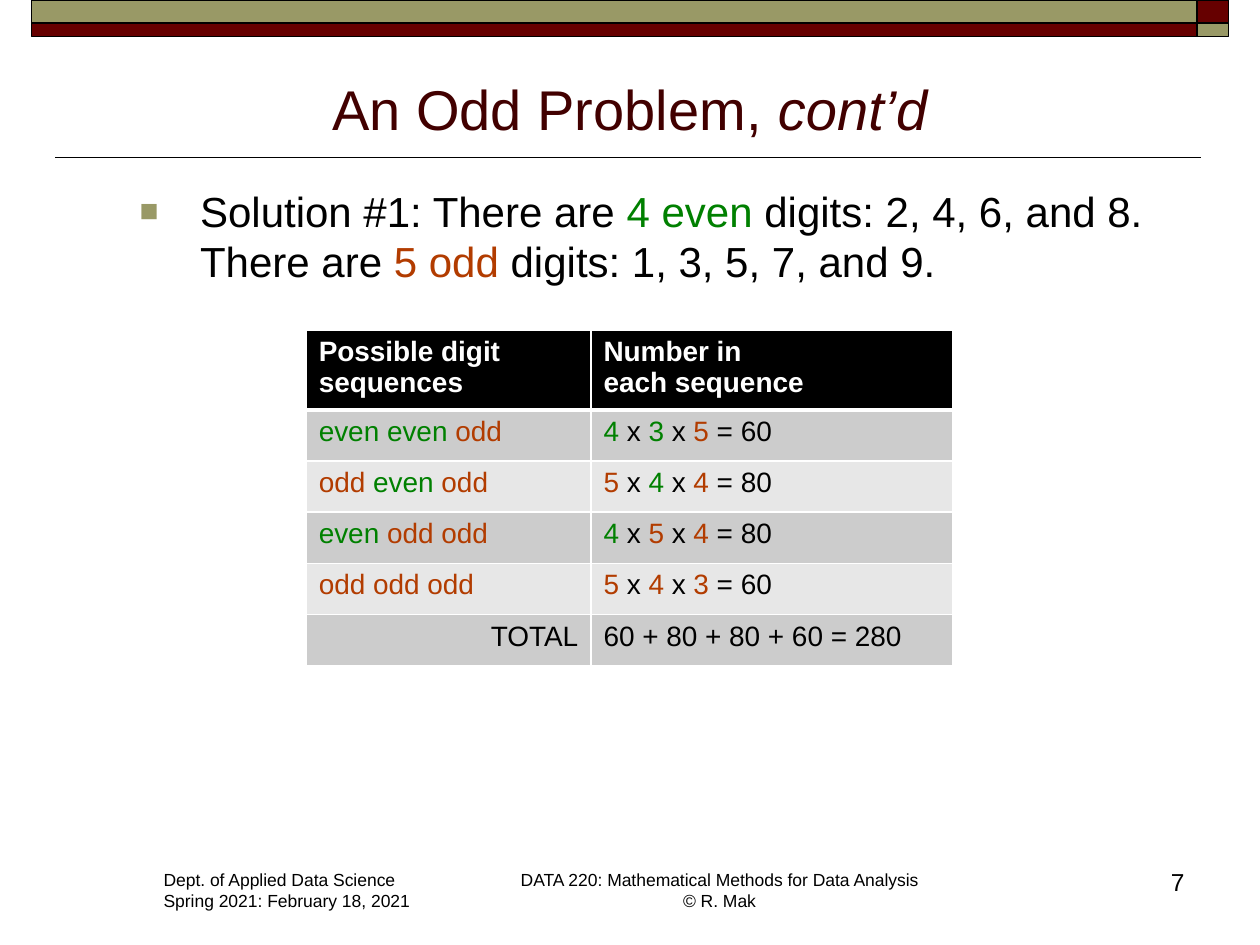
from lxml.etree import SubElement as Sub
from pptx import Presentation
from pptx.dml.color import RGBColor as Rgb
from pptx.enum.shapes import MSO_CONNECTOR as Conn, MSO_SHAPE as Shape
from pptx.enum.text import MSO_ANCHOR as Anchor, MSO_AUTO_SIZE as Fit, PP_ALIGN as Align
from pptx.oxml.ns import qn
from pptx.util import Inches, Pt

HUES = {
    "ink": "000000", "paper": "FFFFFF", "wine": "660000", "olive": "999966",
    "title": "420000", "even": "008000", "odd": "B23C00",
    "dark": "CCCCCC", "pale": "E7E7E7",
}
UNIT = 0.1  # the grid has 100 columns and 75 rows


def put(item, **vals):
    for name, val in vals.items():
        setattr(item, name, val)


def hue(name):
    return Rgb.from_string(HUES[name])


class Deck:
    font = "Arial"

    def __init__(self, cols, rows):
        self.file = Presentation()
        put(self.file, slide_width=self.grid(cols), slide_height=self.grid(rows))
        self.slide = self.file.slides.add_slide(self.file.slide_layouts[6])
        self.items = self.slide.shapes

    def grid(self, count):
        return Inches(round(count * UNIT, 3))

    def place(self, *spots):
        return [self.grid(spot) for spot in spots]

    def bar(self, spot, fill):
        box = self.items.add_shape(Shape.RECTANGLE, *self.place(*spot))
        box.shadow.inherit = False
        box.fill.solid()
        box.fill.fore_color.rgb = hue(fill)
        box.line.color.rgb = hue("ink")
        box.line.width = Pt(1)

    def rule(self, *ends):
        line = self.items.add_connector(Conn.STRAIGHT, *self.place(*ends))
        line.line.color.rgb = hue("ink")
        line.line.width = Pt(1)
        Sub(line._element.spPr, qn("a:effectLst"))

    def words(self, para, runs, size, align=Align.LEFT, **look):
        """Each run is (text, colour) or (text, colour, extra format)."""
        para.alignment = align
        for text, color, *more in runs:
            for num, part in enumerate(text.split("\n")):
                if num:
                    para.add_line_break()
                run = para.add_run()
                run.text = part
                put(run.font, name=self.font, size=Pt(size), **look)
                run.font.color.rgb = hue(color)
                for extra in more:
                    put(run.font, **extra)

    def text(self, spot, paras, size, align=Align.LEFT, **frame):
        body = self.items.add_textbox(*self.place(*spot)).text_frame
        put(body, **{"word_wrap": True, "auto_size": Fit.NONE, **frame})
        for num, runs in enumerate(paras):
            para = body.add_paragraph() if num else body.paragraphs[0]
            self.words(para, runs, size, align)
        return body

    def bullet(self, para, left, hang, color, share, sign):
        props = para._p.get_or_add_pPr()
        props.set("marL", str(Inches(left)))
        props.set("indent", str(-Inches(hang)))
        tint = Sub(props, qn("a:buClr"))
        Sub(tint, qn("a:srgbClr"), val=HUES[color])
        Sub(props, qn("a:buSzPct"), val=str(share * 1000))
        Sub(props, qn("a:buFont"), typeface=self.font)
        Sub(props, qn("a:buChar"), char=sign)

    def edges(self, cell, **widths):
        props = cell._tc.get_or_add_tcPr()
        for side in "LRTB":
            line = Sub(props, qn("a:ln" + side), w=str(Pt(widths.get(side, 1))))
            fill = Sub(line, qn("a:solidFill"))
            Sub(fill, qn("a:srgbClr"), val=HUES["paper"])

    def table(self, left, top, wides, high, rows, size):
        spot = self.place(left, top, sum(wides), high * len(rows))
        grid = self.items.add_table(len(rows), len(wides), *spot).table
        for col, wide in zip(grid.columns, wides):
            col.width = self.grid(wide)
        for num, cells in enumerate(rows):
            grid.rows[num].height = self.grid(high)
            head = num == 0
            shade = "ink" if head else ("pale", "dark")[num % 2]
            for col, (runs, align) in enumerate(cells):
                cell = grid.cell(num, col)
                self.edges(cell, B=3 if head else 1, T=3 if num == 1 else 1)
                cell.fill.solid()
                cell.fill.fore_color.rgb = hue(shade)
                self.words(cell.text_frame.paragraphs[0], runs, size, align, bold=head)


def case(kinds, counts, total):
    """One table row: the digit kinds, then the product of their counts."""
    names, terms = [], []
    for num, (kind, count) in enumerate(zip(kinds, counts)):
        last = num == len(kinds) - 1
        names.append((kind if last else kind + " ", kind))
        terms += [(str(count), kind), (f" = {total}" if last else " x ", "ink")]
    return [(names, Align.LEFT), (terms, Align.LEFT)]


def main():
    deck = Deck(100, 75)

    # Top band and title rule
    deck.rule(95.3, 12.5, 4.4, 12.5)
    for left, wide, fills in ((95, 2.5, ("wine", "olive")), (2.5, 92.5, ("olive", "wine"))):
        for top, high, fill in zip((0, 1.8), (1.8, 1.1), fills):
            deck.bar((left, top, wide, high), fill)

    # Footer
    feet = (
        (12, 21.7, Align.LEFT, ("Dept. of Applied Data Science", "Spring 2021: February 18, 2021")),
        (40, 34.2, Align.CENTER, ("DATA 220: Mathematical Methods for Data Analysis", "© R. Mak")),
    )
    for left, wide, align, lines in feet:
        deck.text((left, 68.5, wide, 4.4), [[(line, "ink")] for line in lines], 10, align,
                  word_wrap=False, auto_size=Fit.SHAPE_TO_FIT_TEXT)

    # Title
    title = [("An Odd Problem, ", "title"), ("cont’d", "title", {"italic": True})]
    deck.text((5, 4.5, 90, 7.2), [title], 32, Align.CENTER, vertical_anchor=Anchor.BOTTOM)

    # Solution
    facts = [
        ("Solution #1: There are ", "ink"), ("4 even", "even"),
        (" digits: 2, 4, 6, and 8.\nThere are ", "ink"), ("5 odd", "odd"),
        (" digits: 1, 3, 5, 7, and 9.", "ink"),
    ]
    body = deck.text((5, 14.2, 90, 9.3), [facts], 24)
    deck.bullet(body.paragraphs[0], 0.99, 0.48, "olive", 75, "■")

    # Page number
    deck.text((87, 68.3, 8, 5), [[("7", "ink")]], 14, Align.RIGHT)

    # Table of cases
    even, odd = "even", "odd"
    heads = ("Possible digit sequences", "Number in \neach sequence")
    rows = [
        [([(head, "paper")], Align.LEFT) for head in heads],
        case((even, even, odd), (4, 3, 5), 60),
        case((odd, even, odd), (5, 4, 4), 80),
        case((even, odd, odd), (4, 5, 4), 80),
        case((odd, odd, odd), (5, 4, 3), 60),
        [([("TOTAL", "ink")], Align.RIGHT), ([("60 + 80 + 80 + 60 = 280", "ink")], Align.LEFT)],
    ]
    deck.table(24.3, 26.2, (22.6, 28.7), 4.06, rows, 16)

    deck.file.save("out.pptx")


if __name__ == "__main__":
    main()
